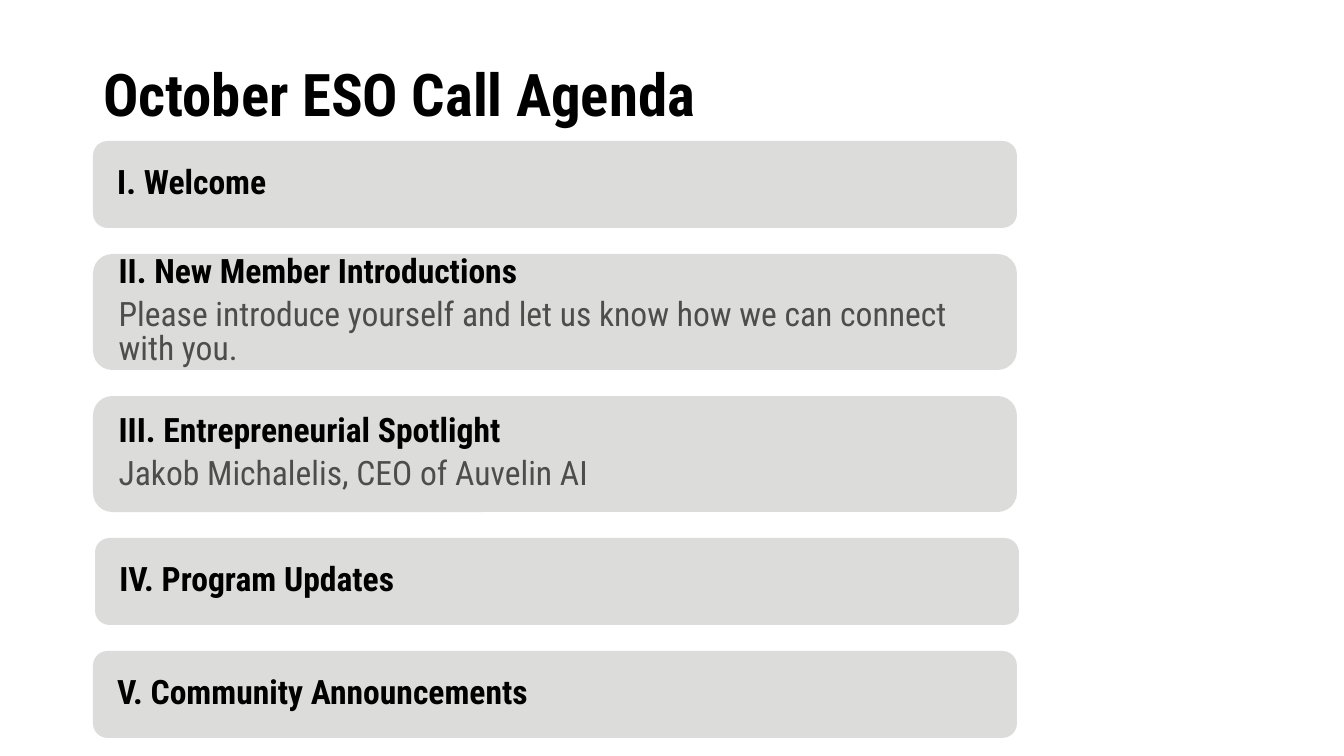
from pptx import Presentation
from pptx import util as u
from pptx.dml.color import RGBColor
from pptx.enum import shapes, text

TITLE = "October ESO Call Agenda"
ITEMS = [
    ("I. Welcome", "", 0),
    ("II. New Member Introductions",
     "Please introduce yourself and let us know how we can connect with you.", 0),
    ("III. Entrepreneurial Spotlight", "Jakob Michalelis, CEO of Auvelin AI", 0),
    ("IV. Program Updates", "", 2),
    ("V. Community Announcements", "", 0),
]
FACE = "Roboto Condensed"
BLACK, GREY, PANEL = "000000", "4D4D4C", "DCDCDB"
LEFT, TOP, WIDTH, GAP = 93, 141, 924, 26
SHORT, TALL, INSET = 87, 116, 10
HEAD = {"size": u.Pt(24), "bold": True, "name": FACE}
NOTE = {**HEAD, "bold": False}
FRAME = {"word_wrap": True, "auto_size": text.MSO_AUTO_SIZE.NONE,
         "vertical_anchor": text.MSO_ANCHOR.MIDDLE}
PARA = {"alignment": text.PP_ALIGN.LEFT, "line_spacing": 0.85,
        "space_before": u.Pt(0), "space_after": u.Pt(6)}


def px(n):
    return u.Emu(round(n * 914400 / 100.8))


def rgb(code):
    return RGBColor.from_string(code)


def apply(item, values):
    for key, value in values.items():
        setattr(item, key, value)


def write(para, words, style, color, form, indent=0):
    props = para._p.get_or_add_pPr()
    props.set("marL", str(px(indent)))
    props.set("indent", "0")
    apply(para, form)
    run = para.add_run()
    run.text = words
    apply(run.font, style)
    run.font.color.rgb = rgb(color)


def add_title(slide):
    title = slide.shapes.title
    apply(title, {"left": px(LEFT), "top": px(24), "width": px(1159), "height": px(146)})
    frame = title.text_frame
    apply(frame, FRAME)
    write(frame.paragraphs[0], TITLE, {**HEAD, "size": u.Pt(42)}, BLACK,
          {**PARA, "line_spacing": 0.9, "space_after": u.Pt(0)})


def add_panel(slide, head, note, shift, top, height):
    panel = slide.shapes.add_shape(shapes.MSO_SHAPE.ROUNDED_RECTANGLE,
                                   px(LEFT + shift), px(top), px(WIDTH), px(height))
    panel.shadow.inherit = False
    panel.fill.solid()
    panel.fill.fore_color.rgb = rgb(PANEL)
    panel.line.fill.background()
    frame = panel.text_frame
    apply(frame, FRAME)
    apply(frame, {f"margin_{side}": px(INSET) for side in ("left", "top", "right", "bottom")})
    write(frame.paragraphs[0], head, HEAD, BLACK, PARA, INSET)
    if note:
        write(frame.add_paragraph(), note, NOTE, GREY, PARA, INSET)


def main():
    deck = Presentation()
    deck.slide_width, deck.slide_height = px(1344), px(756)
    slide = deck.slides.add_slide(deck.slide_layouts[5])
    add_title(slide)
    top = TOP
    for head, note, shift in ITEMS:
        height = TALL if note else SHORT
        add_panel(slide, head, note, shift, top, height)
        top += height + GAP
    deck.save("out.pptx")


if __name__ == "__main__":
    main()
